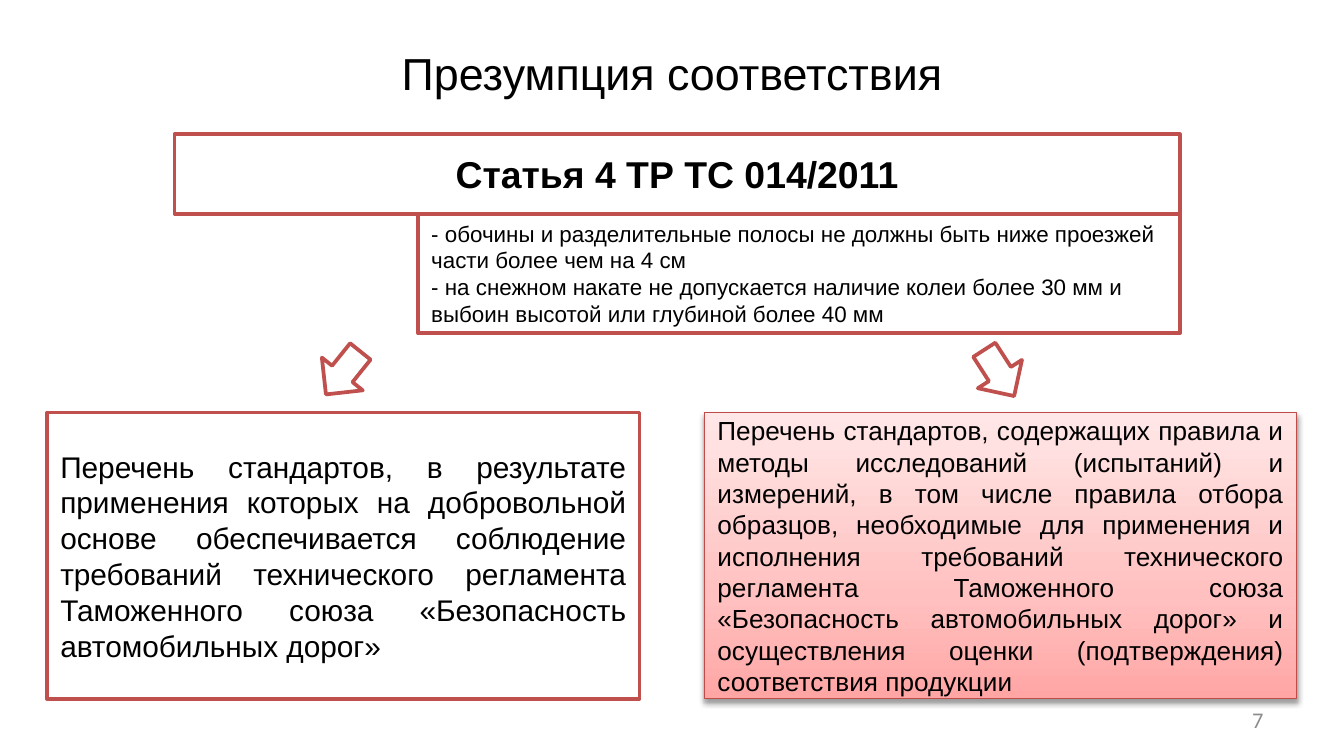
"""Build the slide on presumption of conformity under TR TS 014/2011."""
import pptx
import pptx.dml.color
import pptx.enum.shapes
import pptx.enum.text
import pptx.oxml
import pptx.oxml.ns
import pptx.util
from pptx.util import Cm

TITLE = "Презумпция соответствия"
ARTICLE = "Статья 4 ТР ТС 014/2011"
DETAILS = [
    "- обочины и разделительные полосы не должны быть ниже проезжей части более чем на 4 см",
    "- на снежном накате не допускается наличие колеи более 30 мм и выбоин высотой или глубиной более 40 мм",
]
VOLUNTARY_LIST = (
    "Перечень стандартов, в результате применения которых на добровольной основе "
    "обеспечивается соблюдение требований технического регламента Таможенного союза "
    "«Безопасность автомобильных дорог»"
)
METHODS_LIST = (
    "Перечень стандартов, содержащих правила и методы исследований (испытаний) и измерений, "
    "в том числе правила отбора образцов, необходимые для применения и исполнения требований "
    "технического регламента Таможенного союза «Безопасность автомобильных дорог» "
    "и осуществления оценки (подтверждения) соответствия продукции"
)
PAGE = "7"

THEME = {
    "font": "Arial", "page_font": "Calibri",
    "text": "000000", "page": "8C8C8C", "fill": "FFFFFF",
    "line": "C0504D", "accent_line": "BF4C48",
    "gradient": [(0, "FFA6A5"), (35, "FFC0BF"), (100, "FFE7E7")],
    "title_size": 24, "article_size": 20, "voluntary_size": 16,
    "methods_size": 14, "small_size": 12,
    "line_width": 2, "accent_width": 0.75,
}
SLIDE_W, SLIDE_H = 25.4, 14.29
ARTICLE_X, ARTICLE_Y, ARTICLE_W, ARTICLE_H = 3.3, 2.54, 19, 1.5
DETAILS_W, DETAILS_H = 14.4, 2.26
LIST_Y, LIST_W, LIST_H, MARGIN = 7.8, 11.2, 5.41, 0.89
ARROW_Y, ARROW_W, ARROW_H = 6.53, 0.99, 1.04
ARROWS = [(5.99, 38.7), (18.39, 327.2)]

SHAPE = pptx.enum.shapes.MSO_SHAPE
ALIGN = pptx.enum.text.PP_ALIGN
NS = pptx.oxml.ns.nsdecls("a")


def rgb(value):
    return pptx.dml.color.RGBColor.from_string(value)


def write(s, paragraphs, size, align, bold=False, font=THEME["font"], color=THEME["text"]):
    tf = s.text_frame
    tf.word_wrap = True
    tf.vertical_anchor = pptx.enum.text.MSO_ANCHOR.MIDDLE
    for i, text in enumerate(paragraphs):
        p = tf.add_paragraph() if i else tf.paragraphs[0]
        p.alignment = align
        r = p.add_run()
        r.text = text
        r.font.name, r.font.size, r.font.bold = font, pptx.util.Pt(size), bold
        r.font.color.rgb = rgb(color)


def add_text(slide, box, *args, **kwargs):
    write(slide.shapes.add_textbox(*map(Cm, box)), *args, **kwargs)


def add_outlined(slide, kind, box):
    s = slide.shapes.add_shape(kind, *map(Cm, box))
    s.shadow.inherit = False
    s.fill.solid()
    s.fill.fore_color.rgb = rgb(THEME["fill"])
    s.line.color.rgb = rgb(THEME["line"])
    s.line.width = pptx.util.Pt(THEME["line_width"])
    return s


def accent(s):
    s.line.color.rgb = rgb(THEME["accent_line"])
    s.line.width = pptx.util.Pt(THEME["accent_width"])
    s.fill.gradient()
    s.fill.gradient_angle = 90
    stops = s._element.spPr.find(".//" + pptx.oxml.ns.qn("a:gsLst"))
    for stop in list(stops):
        stops.remove(stop)
    for position, color in THEME["gradient"]:
        stops.append(pptx.oxml.parse_xml(
            f'<a:gs {NS} pos="{position * 1000}"><a:srgbClr val="{color}"/></a:gs>'))
    effects = s._element.spPr.find(pptx.oxml.ns.qn("a:effectLst"))
    effects.append(pptx.oxml.parse_xml(
        f'<a:outerShdw {NS} blurRad="{pptx.util.Pt(3.1)}" dist="{pptx.util.Pt(1.6)}" '
        f'dir="5400000" rotWithShape="0"><a:srgbClr val="{THEME["text"]}">'
        '<a:alpha val="38000"/></a:srgbClr></a:outerShdw>'))


def main():
    prs = pptx.Presentation()
    prs.slide_width, prs.slide_height = Cm(SLIDE_W), Cm(SLIDE_H)
    slide = prs.slides.add_slide(prs.slide_layouts[6])

    add_text(slide, (1.27, 0.58, 22.86, 1.57), [TITLE], THEME["title_size"], ALIGN.CENTER)

    details_x = ARTICLE_X + ARTICLE_W - DETAILS_W
    details_y = ARTICLE_Y + ARTICLE_H
    methods_x = SLIDE_W - MARGIN - LIST_W
    boxes = [
        ((ARTICLE_X, ARTICLE_Y, ARTICLE_W, ARTICLE_H),
         [ARTICLE], THEME["article_size"], ALIGN.CENTER, True),
        ((details_x, details_y, DETAILS_W, DETAILS_H),
         DETAILS, THEME["small_size"], ALIGN.LEFT, False),
        ((MARGIN, LIST_Y, LIST_W, LIST_H),
         [VOLUNTARY_LIST], THEME["voluntary_size"], ALIGN.JUSTIFY, False),
        ((methods_x, LIST_Y, LIST_W, LIST_H),
         [METHODS_LIST], THEME["methods_size"], ALIGN.JUSTIFY, False),
    ]
    for box, *text in boxes:
        s = add_outlined(slide, SHAPE.RECTANGLE, box)
        write(s, *text)
    accent(s)

    for x, rotation in ARROWS:
        s = add_outlined(slide, SHAPE.DOWN_ARROW, (x, ARROW_Y, ARROW_W, ARROW_H))
        s.rotation = rotation

    add_text(slide, (18.21, 13.23, 5.92, 0.76), [PAGE], THEME["small_size"], ALIGN.RIGHT,
             font=THEME["page_font"], color=THEME["page"])
    prs.save("out.pptx")


if __name__ == "__main__":
    main()
